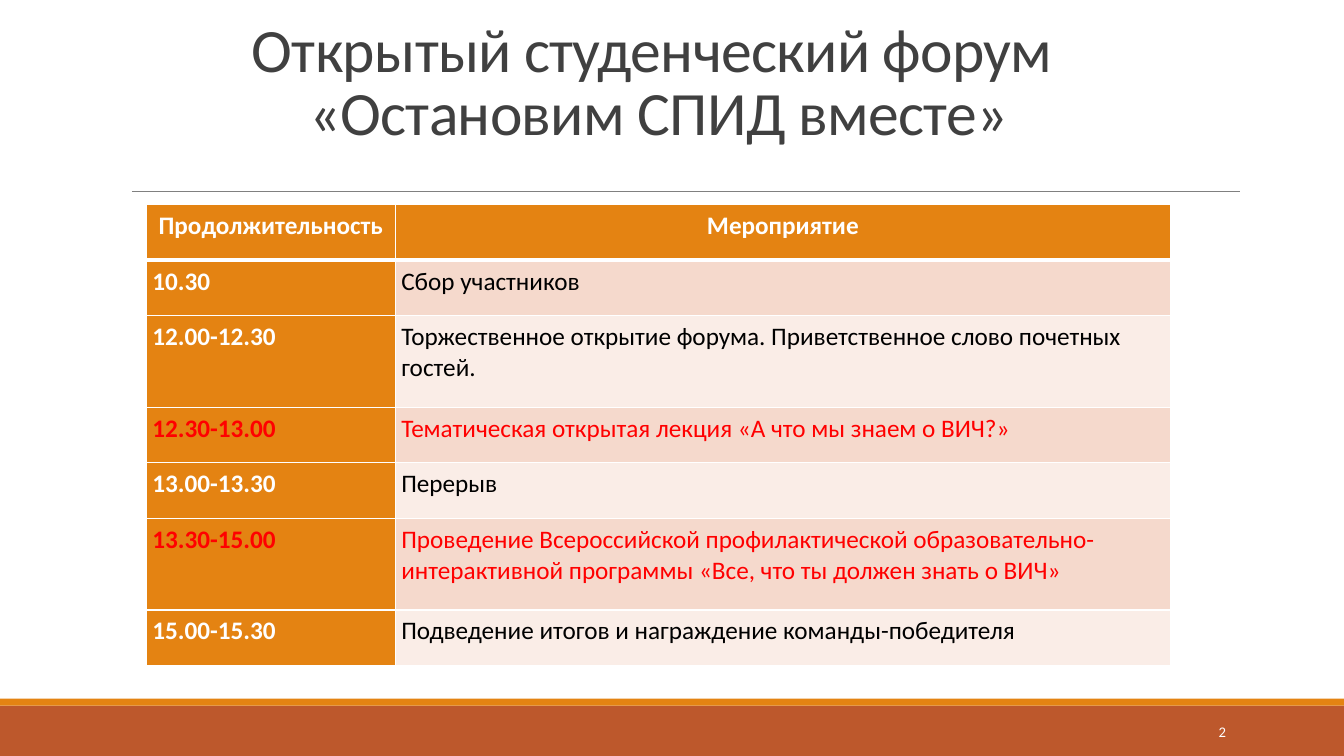
"""Builds the programme slide of the student forum."""
from lxml.etree import SubElement
from pptx import Presentation
from pptx.dml.color import RGBColor
from pptx.enum.shapes import MSO_CONNECTOR as Connector, MSO_SHAPE as Shape
from pptx.enum.text import MSO_ANCHOR as Anchor, PP_ALIGN as Align
from pptx.oxml.ns import qn
from pptx.util import Pt

WIDTH, HEIGHT = 960, 540
ORANGE, RUST, GRAY, DARK = "E48312", "BD582C", "808080", "404040"
WHITE, BLACK, RED = "FFFFFF", "000000", "FF0000"
BANDS = ["F5D9CC", "FAEDE7"]
TITLE = ["Открытый студенческий форум ", "«Остановим СПИД вместе»"]
HEADER = ["Продолжительность", "Мероприятие"]
SHORT, TALL = 39.6, 65.5
PROGRAMME = [
    ("10.30", "Сбор участников", SHORT, False),
    ("12.00-12.30", "Торжественное открытие форума. Приветственное слово почетных гостей.", TALL, False),
    ("12.30-13.00", "Тематическая открытая лекция «А что мы знаем о ВИЧ?»", SHORT, True),
    ("13.00-13.30", "Перерыв", SHORT, False),
    ("13.30-15.00", "Проведение Всероссийской профилактической образовательно-интерактивной "
     "программы «Все, что ты должен знать о ВИЧ»", TALL, True),
    ("15.00-15.30", "Подведение итогов и награждение команды-победителя", SHORT, False),
]


def rgb(value):
    return RGBColor.from_string(value)


class SlideBuilder:
    font_name = "Calibri"

    def __init__(self, slide):
        self.slide = slide

    def style(self, paragraph, size, color, bold=False, align=Align.LEFT):
        paragraph.alignment = align
        font = paragraph.font
        font.name, font.size, font.bold = self.font_name, Pt(size), bold
        font.color.rgb = rgb(color)

    def bar(self, top, height, color):
        shape = self.slide.shapes.add_shape(Shape.RECTANGLE, 0, Pt(top), Pt(WIDTH), Pt(height))
        shape.shadow.inherit = False
        shape.fill.solid()
        shape.fill.fore_color.rgb = rgb(color)
        shape.line.fill.background()

    def rule(self, left, right, top, color, width):
        line = self.slide.shapes.add_connector(Connector.STRAIGHT, Pt(left), Pt(top), Pt(right), Pt(top))
        line.line.color.rgb = rgb(color)
        line.line.width = Pt(width)
        SubElement(line._element.spPr, qn("a:effectLst"))

    def text(self, lines, box, size, color, align, anchor, bottom=3.6, line_spacing=1.0, tracking=0):
        shape = self.slide.shapes.add_textbox(*map(Pt, box))
        frame = shape.text_frame
        frame.word_wrap = True
        frame.vertical_anchor = anchor
        frame.margin_bottom = Pt(bottom)
        paragraph = frame.paragraphs[0]
        for index, line in enumerate(lines):
            if index:
                paragraph.add_line_break()
            paragraph.add_run().text = line
        self.style(paragraph, size, color, align=align)
        paragraph.line_spacing = line_spacing
        if tracking:
            properties = paragraph._p.get_or_add_pPr().get_or_add_defRPr()
            properties.set("spc", str(round(tracking * 100)))

    def border(self, cell, side, width):
        line = SubElement(cell._tc.get_or_add_tcPr(), qn(f"a:ln{side}"), w=str(Pt(width)))
        fill = SubElement(line, qn("a:solidFill"))
        SubElement(fill, qn("a:srgbClr"), val=WHITE)

    def cell(self, cell, text, fill, color, bold, align, top=1, bottom=1):
        cell.margin_left = cell.margin_right = cell.margin_top = cell.margin_bottom = Pt(4.3)
        for side, width in zip("LRTB", (1, 1, top, bottom)):
            self.border(cell, side, width)
        cell.fill.solid()
        cell.fill.fore_color.rgb = rgb(fill)
        cell.text = text
        self.style(cell.text_frame.paragraphs[0], 18, color, bold, align)

    def programme(self, left, top, widths, rows):
        heights = [SHORT] + [height for _, _, height, _ in rows]
        table = self.slide.shapes.add_table(
            len(heights), len(widths), Pt(left), Pt(top), Pt(sum(widths)), Pt(sum(heights))).table
        for column, width in zip(table.columns, widths):
            column.width = Pt(width)
        for row, height in zip(table.rows, heights):
            row.height = Pt(height)
        for column, heading in enumerate(HEADER):
            self.cell(table.cell(0, column), heading, ORANGE, WHITE, True, Align.CENTER, bottom=3)
        for index, (time, event, _, highlighted) in enumerate(rows):
            top_width = 1 if index else 3
            self.cell(table.cell(index + 1, 0), time, ORANGE, RED if highlighted else WHITE,
                      True, Align.LEFT, top_width)
            self.cell(table.cell(index + 1, 1), event, BANDS[index % 2], RED if highlighted else BLACK,
                      False, Align.LEFT, top_width)


def main():
    presentation = Presentation()
    presentation.slide_width, presentation.slide_height = Pt(WIDTH), Pt(HEIGHT)
    builder = SlideBuilder(presentation.slides.add_slide(presentation.slide_layouts[6]))
    builder.bar(504, 36, RUST)
    builder.bar(499, 5, ORANGE)
    builder.rule(94.3, 885.6, 136.8, GRAY, 0.5)
    builder.text(TITLE, (0, 0, 941, 165), 44, DARK, Align.CENTER, Anchor.BOTTOM,
                 bottom=59.5, line_spacing=0.85, tracking=-0.5)
    builder.programme(104.6, 146.3, (177.8, 553.7), PROGRAMME)
    builder.text(["2"], (779.8, 508.3, 103, 28.8), 10.5, WHITE, Align.RIGHT, Anchor.MIDDLE)
    presentation.save("out.pptx")


if __name__ == "__main__":
    main()
